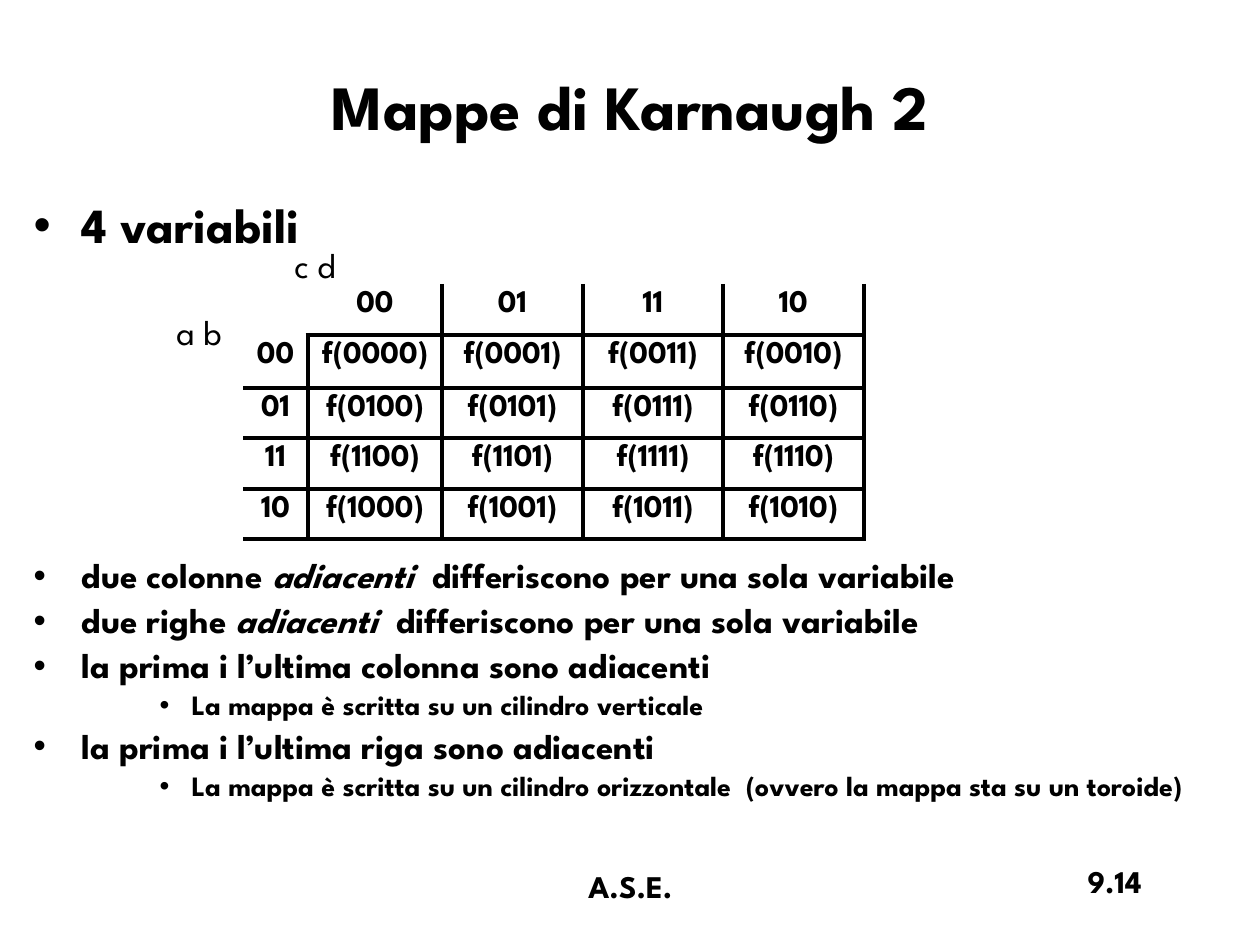
from lxml import etree
from pptx import Presentation
from pptx import util as u
from pptx.dml.color import RGBColor
from pptx.enum import text
from pptx.oxml.ns import qn

PX = 7257.14  # EMU per px, 126 px to the inch
FONT, BLACK = "League Spartan", "000000"
LEFT, CENTER, RIGHT = text.PP_ALIGN.LEFT, text.PP_ALIGN.CENTER, text.PP_ALIGN.RIGHT

# Content
TITLE = "Mappe di Karnaugh 2"
# level, size, space before in points, runs (every second run is italic)
POINTS = [
    (0, 28, 0, ["4 variabili"]),
    (0, 20, 174, ["due colonne ", "adiacenti ", " differiscono per una sola variabile"]),
    (0, 20, 4, ["due righe ", "adiacenti", "  differiscono per una sola variabile"]),
    (0, 20, 4, ["la prima i l’ultima colonna sono adiacenti"]),
    (2, 16, 3.2, ["La mappa è scritta su un cilindro verticale"]),
    (0, 20, 4, ["la prima i l’ultima riga sono adiacenti"]),
    (2, 16, 3.2, ["La mappa è scritta su un cilindro orizzontale  (ovvero la mappa sta su un toroide)"]),
]
INDENTS = {0: (48, -48), 2: (158, -32)}  # level: left margin, first line
GRAY = ["00", "01", "11", "10"]
MAP_ROWS = [[""] + GRAY] + [[ab] + [f"f({ab}{cd})" for cd in GRAY] for ab in GRAY]
MAP_AT = (243, 284)
COL_WIDTHS = [65, 134, 141, 140, 141]
ROW_HEIGHTS = [50, 53, 50, 51, 50]
# text, box, size, bold, alignment, wrap
LABELS = [
    ("c d", (282, 237, 77, 54), 20, False, LEFT, False),
    ("a b", (164, 304, 77, 54), 20, False, LEFT, False),
    ("9.14", (892, 856, 262, 63), 18, True, RIGHT, True),
    ("A.S.E.", (431, 861, 399, 63), 18, True, CENTER, True),
]


def px(n):
    return u.Emu(round(n * PX))


def color(hex_string):
    return RGBColor.from_string(hex_string)


def set_font(font, size, bold=True, italic=False):
    values = {"name": FONT, "size": u.Pt(size), "bold": bold, "italic": italic}
    for name, value in values.items():
        setattr(font, name, value)
    font.color.rgb = color(BLACK)


def write(frame, words, size, bold, align):
    line = frame.paragraphs[0]
    line.alignment = align
    run = line.add_run()
    run.text = words
    set_font(run.font, size, bold)


def place(shape, box):
    for name, value in zip(("left", "top", "width", "height"), box):
        setattr(shape, name, px(value))


def add_bullet(paragraph, level):
    props = paragraph._p.get_or_add_pPr()
    margin, first = INDENTS[level]
    props.set("marL", str(px(margin)))
    props.set("indent", str(px(first)))
    etree.SubElement(props, qn("a:buFont"), typeface="Arial")
    etree.SubElement(props, qn("a:buChar"), char="•")


def set_borders(cell, drawn):
    props = cell._tc.get_or_add_tcPr()
    for side in "LRTB":
        line = etree.SubElement(props, qn(f"a:ln{side}"), w=str(u.Pt(3)))
        if side in drawn:
            fill = etree.SubElement(line, qn("a:solidFill"))
            etree.SubElement(fill, qn("a:srgbClr"), val=BLACK)
        else:
            etree.SubElement(line, qn("a:noFill"))


def map_borders(row, col):
    """Grid lines run through the headers, open at the top, left and corner."""
    if row == col == 0:
        return ""
    sides = "RB"
    if col > 1 or (col == 1 and row > 0):
        sides += "L"
    if row > 1 or (row == 1 and col > 0):
        sides += "T"
    return sides


def main():
    prs = Presentation()
    prs.slide_width, prs.slide_height = u.Inches(10), u.Inches(7.5)
    slide = prs.slides.add_slide(prs.slide_layouts[1])

    # Title
    title = slide.shapes.title
    place(title, (21, 26, 1218, 158))
    title.text_frame.vertical_anchor = text.MSO_ANCHOR.MIDDLE
    write(title.text_frame, TITLE, 36, True, CENTER)

    # Bullet list, with room for the map after its first point
    body = slide.placeholders[1]
    place(body, (21, 195, 1218, 651))
    frame = body.text_frame
    frame.auto_size = text.MSO_AUTO_SIZE.NONE
    for i, (level, size, before, runs) in enumerate(POINTS):
        point = frame.paragraphs[0] if i == 0 else frame.add_paragraph()
        point.level = level
        add_bullet(point, level)
        point.line_spacing = 0.9
        point.space_before = u.Pt(before)
        for j, words in enumerate(runs):
            run = point.add_run()
            run.text = words
            set_font(run.font, size, italic=j % 2 == 1)

    # Karnaugh map
    karnaugh = slide.shapes.add_table(
        len(MAP_ROWS), len(COL_WIDTHS), *map(px, MAP_AT),
        px(sum(COL_WIDTHS)), px(sum(ROW_HEIGHTS))).table
    karnaugh.first_row = karnaugh.horz_banding = False
    for column, width in zip(karnaugh.columns, COL_WIDTHS):
        column.width = px(width)
    for row, height in zip(karnaugh.rows, ROW_HEIGHTS):
        row.height = px(height)
    for r, entries in enumerate(MAP_ROWS):
        for c, entry in enumerate(entries):
            cell = karnaugh.cell(r, c)
            set_borders(cell, map_borders(r, c))
            cell.fill.background()
            cell.margin_left = cell.margin_right = px(6)
            if entry:
                write(cell.text_frame, entry, 18, True, CENTER)

    # Variable names and footer
    for words, box, size, bold, align, wrap in LABELS:
        label = slide.shapes.add_textbox(*map(px, box)).text_frame
        label.word_wrap = wrap
        write(label, words, size, bold, align)

    prs.save("out.pptx")


if __name__ == "__main__":
    main()
